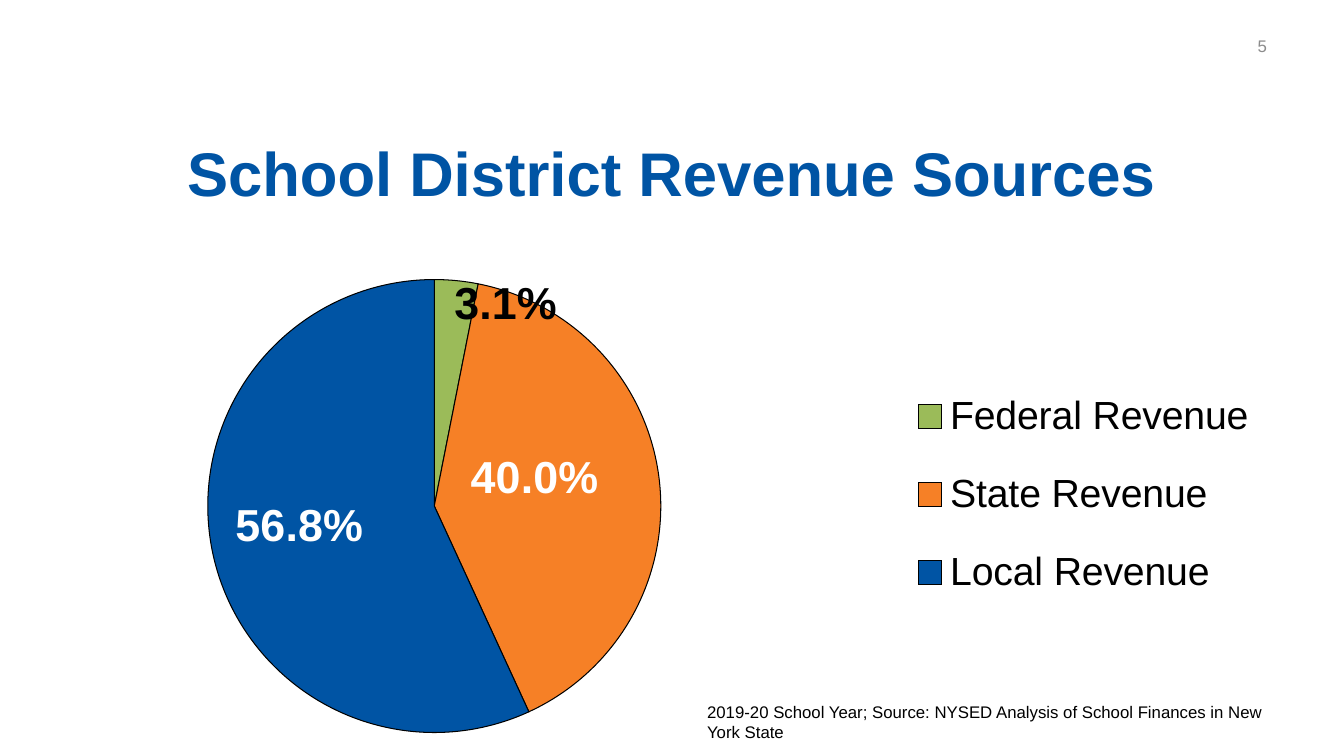
from typing import NamedTuple

from lxml.etree import SubElement
from pptx import Presentation
from pptx.chart.data import CategoryChartData
from pptx.dml.color import RGBColor
from pptx.enum.chart import XL_CHART_TYPE, XL_LABEL_POSITION, XL_LEGEND_POSITION
from pptx.enum.text import MSO_ANCHOR, PP_ALIGN
from pptx.oxml import parse_xml
from pptx.oxml.ns import nsdecls, qn
from pptx.util import Pt

FONT = "Arial"
BLACK, WHITE, BLUE, GREY = "000000", "FFFFFF", "0054A4", "8C8C8C"
PERCENT = "0.0%"


class Box(NamedTuple):
    left: float
    top: float
    width: float
    height: float

    def emu(self) -> list:
        return [Pt(v) for v in self]


class Source(NamedTuple):
    name: str
    share: float
    fill: str
    label_color: str
    label_shift: tuple


class Note(NamedTuple):
    text: str
    box: Box
    color: str
    align: PP_ALIGN
    anchor: MSO_ANCHOR


SOURCES = [
    Source("Federal Revenue", 0.031, "9BBB59", BLACK, (0.05, -0.18)),
    Source("State Revenue", 0.4, "F68026", WHITE, (-0.01, -0.03)),
    Source("Local Revenue", 0.568, BLUE, WHITE, (-0.02, -0.01)),
]
NOTES = [
    Note("5", Box(696, 18, 216, 29), GREY, PP_ALIGN.RIGHT, MSO_ANCHOR.MIDDLE),
    Note("2019-20 School Year; Source: NYSED Analysis of School Finances in New York State",
         Box(498, 497.5, 426, 22), BLACK, PP_ALIGN.LEFT, MSO_ANCHOR.TOP),
]


def rgb(value: str) -> RGBColor:
    return RGBColor.from_string(value)


def style_font(font, size: float, color: str, bold: bool = False) -> None:
    for key, value in {"name": FONT, "size": Pt(size), "bold": bold}.items():
        setattr(font, key, value)
    font.color.rgb = rgb(color)


def manual_layout(**values):
    """Build a c:layout element from mode and fraction values, in schema order."""
    layout = parse_xml(f"<c:layout {nsdecls('c')}/>")
    manual = SubElement(layout, qn("c:manualLayout"))
    for tag, value in values.items():
        SubElement(manual, qn(f"c:{tag}")).set("val", str(value))
    return layout


def replace_layout(parent, layout, index: int) -> None:
    for old in parent.findall(qn("c:layout")):
        parent.remove(old)
    parent.insert(index, layout)


def style_slice(point, source: Source) -> None:
    point.format.fill.solid()
    point.format.fill.fore_color.rgb = rgb(source.fill)
    point.format.line.color.rgb = rgb(BLACK)
    point.format.line.width = Pt(0.75)
    label = point.data_label
    style_font(label.font, 32, source.label_color, True)
    label.position = XL_LABEL_POSITION.CENTER


def add_revenue_pie(s, box: Box) -> None:
    data = CategoryChartData(number_format=PERCENT)
    data.categories = [source.name for source in SOURCES]
    data.add_series("Series 1", [source.share for source in SOURCES])
    chart = s.shapes.add_chart(XL_CHART_TYPE.PIE, *box.emu(), data).chart
    chart.has_title = False
    style_font(chart.font, 10, BLACK)

    chart.has_legend = True
    legend = chart.legend
    legend.position = XL_LEGEND_POSITION.RIGHT
    legend.include_in_layout = False
    style_font(legend.font, 28, BLACK)

    series = chart.plots[0].series[0]
    labels = series.data_labels
    labels.show_value = True
    labels.number_format = PERCENT
    labels.number_format_is_linked = False
    style_font(labels.font, 32, WHITE, True)
    for i, source in enumerate(SOURCES):
        style_slice(series.points[i], source)

    root = chart.element
    for leader in root.iter(qn("c:showLeaderLines")):
        leader.set("val", "0")
    for label, source in zip(root.iter(qn("c:dLbl")), SOURCES):
        x, y = source.label_shift
        replace_layout(label, manual_layout(x=x, y=y), 1)
        label.insert(2, parse_xml(
            f'<c:numFmt {nsdecls("c")} formatCode="{PERCENT}" sourceLinked="0"/>'))
    replace_layout(next(root.iter(qn("c:plotArea"))), manual_layout(
        layoutTarget="inner", xMode="edge", yMode="edge",
        x=0.116, y=0.089, w=0.375, h=0.909), 0)
    replace_layout(next(root.iter(qn("c:legend"))), manual_layout(
        xMode="edge", yMode="edge", x=0.69, y=0.25, w=0.3, h=0.54), 1)


def add_note(s, note: Note) -> None:
    tf = s.shapes.add_textbox(*note.box.emu()).text_frame
    tf.word_wrap = True
    tf.vertical_anchor = note.anchor
    p = tf.paragraphs[0]
    p.text = note.text
    p.alignment = note.align
    style_font(p.runs[0].font, 12, note.color)


def add_title(s, text: str, box: Box) -> None:
    title = s.shapes.title
    for key, value in zip(("left", "top", "width", "height"), box.emu()):
        setattr(title, key, value)
    tf = title.text_frame
    tf.vertical_anchor = MSO_ANCHOR.MIDDLE
    p = tf.paragraphs[0]
    p.text = text
    p.alignment = PP_ALIGN.CENTER
    style_font(p.runs[0].font, 44, BLUE, True)


def main() -> None:
    prs = Presentation()
    prs.slide_width, prs.slide_height = Pt(960), Pt(540)
    s = prs.slides.add_slide(prs.slide_layouts[5])
    add_title(s, "School District Revenue Sources", Box(48, 78, 864, 90))
    add_revenue_pie(s, Box(48, 168, 864, 356))
    for note in NOTES:
        add_note(s, note)
    prs.save("out.pptx")


if __name__ == "__main__":
    main()
